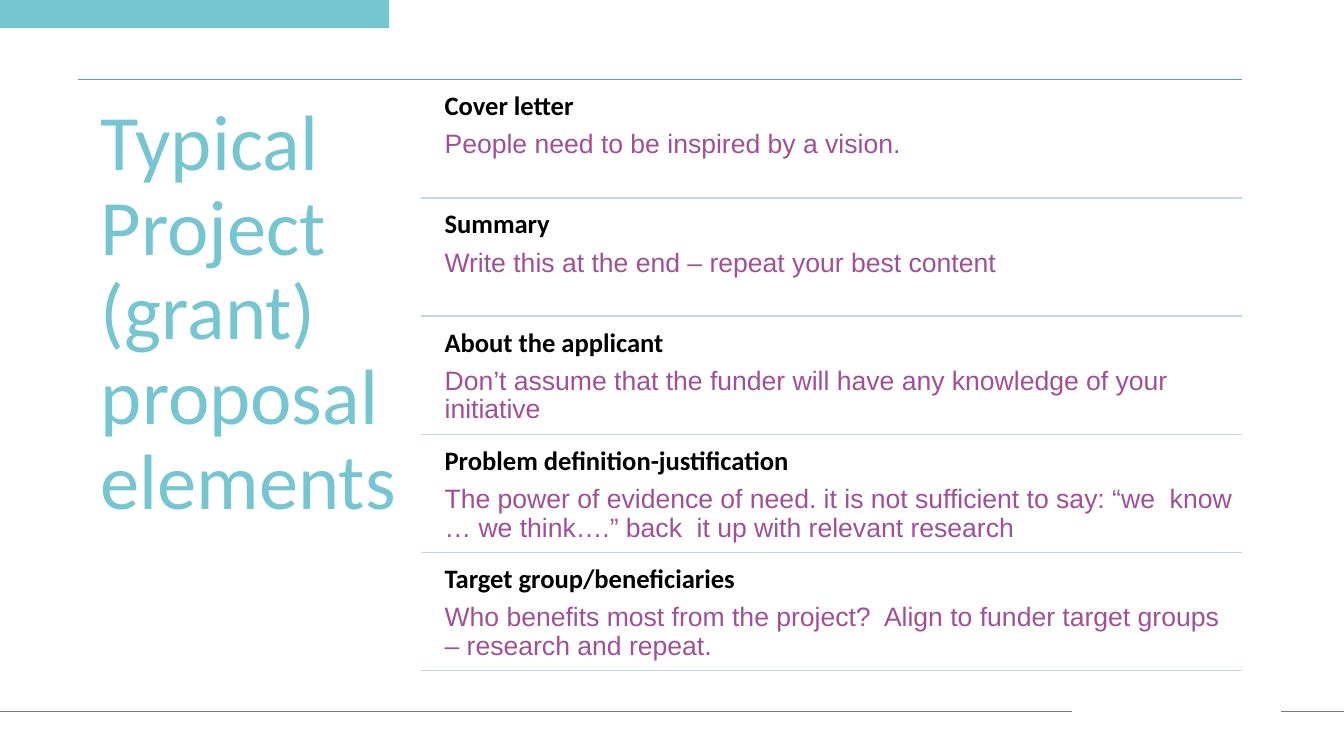
"""Builds the slide on typical elements of a grant proposal."""
from lxml import etree
from pptx import Presentation
from pptx.dml.color import RGBColor
from pptx.enum import shapes, text
from pptx.oxml import ns
from pptx.util import Inches, Pt

TEAL, PLUM, BLACK = "76C6D2", "A05096", "000000"
GREY, BLUE, PALE = "797979", "5B9BD5", "C4D5EB"
LEFT, RIGHT, TOP, STEP = 0.77, 12.32, 0.79, 1.173
PARTS = [
    ("Cover letter", "People need to be inspired by a vision."),
    ("Summary", "Write this at the end – repeat your best content"),
    ("About the applicant",
     "Don’t assume that the funder will have any knowledge of your initiative"),
    ("Problem definition-justification",
     "The power of evidence of need. it is not sufficient to say: “we  know "
     "… we think….” back \tit up with relevant research"),
    ("Target group/beneficiaries",
     "Who benefits most from the project?  Align to funder target groups "
     "– research and repeat."),
]


def paint(color, value):
    """Set a colour format to a hex value."""
    color.rgb = RGBColor.from_string(value)


def add_band(slide, left, top, width, height, fill):
    """Add a plain filled rectangle."""
    band = slide.shapes.add_shape(
        shapes.MSO_SHAPE.RECTANGLE,
        Inches(left), Inches(top), Inches(width), Inches(height))
    band.shadow.inherit = False
    band.fill.solid()
    paint(band.fill.fore_color, fill)
    band.line.fill.background()


def add_rule(slide, start, end, y, color, width=1):
    """Add a horizontal line without shadow."""
    rule = slide.shapes.add_connector(
        shapes.MSO_CONNECTOR.STRAIGHT,
        Inches(start), Inches(y), Inches(end), Inches(y))
    paint(rule.line.color, color)
    rule.line.width = Pt(width)
    etree.SubElement(rule._element.spPr, ns.qn("a:effectLst"))


def add_text(slide, left, top, width, height, inset, size, lines):
    """Add a text box with one styled run for each line."""
    box = slide.shapes.add_textbox(
        Inches(left), Inches(top), Inches(width), Inches(height))
    frame = box.text_frame
    frame.word_wrap = True
    frame.vertical_anchor = text.MSO_ANCHOR.TOP
    frame.margin_left = frame.margin_right = Inches(inset)
    frame.margin_top = frame.margin_bottom = Inches(inset)
    for i, (words, face, color, bold) in enumerate(lines):
        para = frame.add_paragraph() if i else frame.paragraphs[0]
        para.line_spacing = 0.9
        para.space_after = Pt(round(size * 0.35, 2))
        run = para.add_run()
        run.text = words
        run.font.name = face
        run.font.size = Pt(size)
        run.font.bold = bold
        paint(run.font.color, color)


def main():
    """Build the slide and save it."""
    deck = Presentation()
    deck.slide_width, deck.slide_height = Inches(13.33), Inches(7.5)
    slide = deck.slides.add_slide(deck.slide_layouts[6])
    add_band(slide, 0, 0, 3.86, 0.28, TEAL)
    for start, end in ((0, 10.63), (12.71, 13.33)):
        add_rule(slide, start, end, 7.06, GREY, 0.5)
    add_rule(slide, LEFT, RIGHT, TOP, BLUE)
    add_text(slide, LEFT, TOP, 3.41, 5.93, 0.23, 56,
             [("Typical Project (grant) proposal elements", "Calibri", TEAL, False)])
    for i, (head, body) in enumerate(PARTS):
        y = TOP + i * STEP
        add_text(slide, 4.33, y + 0.05, 7.99, 1.12, 0.08, 19,
                 [(head, "Calibri", BLACK, True), (body, "Arial", PLUM, False)])
        add_rule(slide, 4.18, RIGHT, y + STEP, PALE)
    deck.save("out.pptx")


if __name__ == "__main__":
    main()
